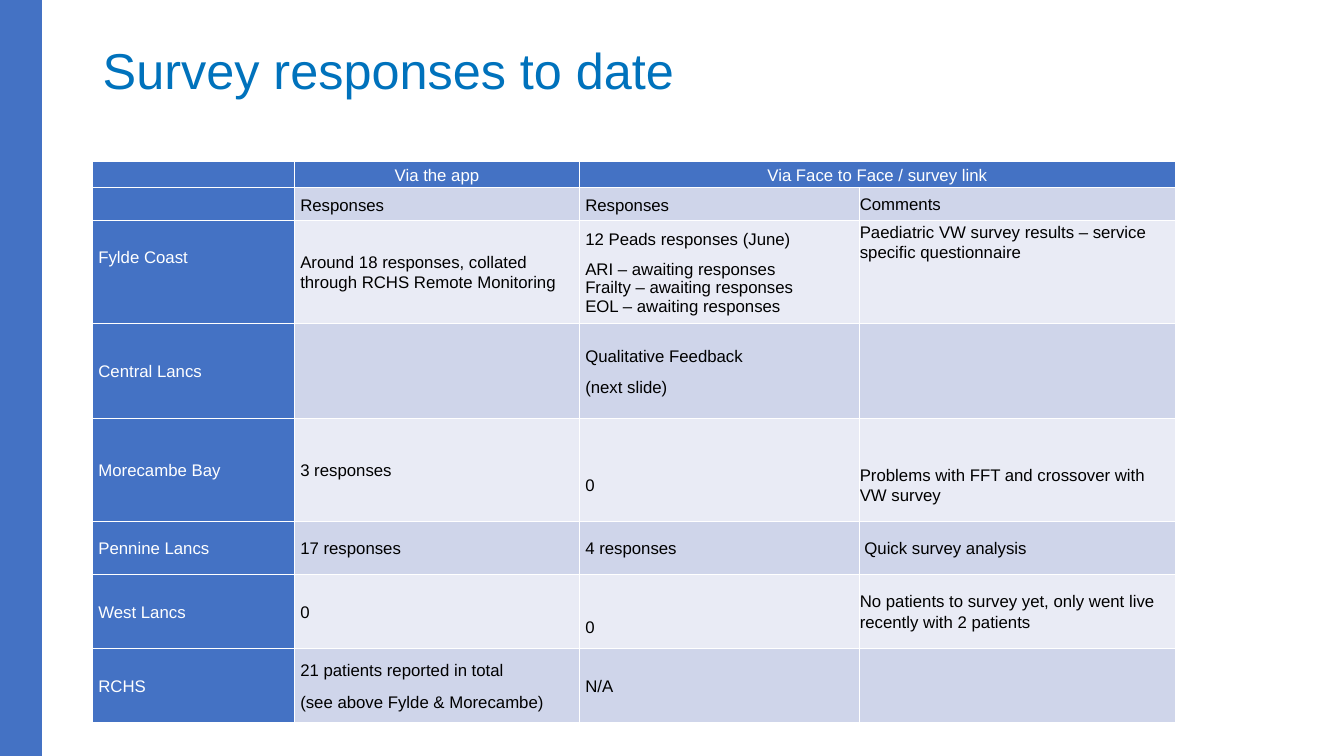
from lxml.etree import SubElement
from pptx import Presentation
from pptx.dml.color import RGBColor
from pptx.enum.shapes import MSO_SHAPE
from pptx.enum.text import MSO_ANCHOR, MSO_AUTO_SIZE, PP_ALIGN
from pptx.oxml.ns import qn
from pptx.util import Pt

BLUE, WHITE, BLACK = "4472C4", "FFFFFF", "000000"
BANDS = ["E9EBF5", "CFD5EA"]


def paint(target, color):
    target.solid()
    target.fore_color.rgb = RGBColor.from_string(color)


def write(para, text, size=12, color=BLACK, align=PP_ALIGN.LEFT, spacing=1.07, after=8):
    para.alignment = align
    para.line_spacing = spacing
    para.space_after = Pt(after)
    if not text:
        SubElement(para._p, qn("a:endParaRPr"), sz=str(size * 100))
        return
    span = para.add_run()
    span.text = text
    span.font.name = "Arial"
    span.font.size = Pt(size)
    span.font.color.rgb = RGBColor.from_string(color)


deck = Presentation()
deck.slide_width, deck.slide_height = Pt(960), Pt(540)
page = deck.slides.add_slide(deck.slide_layouts[5])

# Side bar
bar = page.shapes.add_shape(MSO_SHAPE.RECTANGLE, 0, 0, Pt(30), Pt(540))
bar.shadow.inherit = False
paint(bar.fill, BLUE)
bar.line.fill.background()

# Title
title = page.shapes.title
title.left, title.top, title.width, title.height = Pt(66.2), Pt(28.8), Pt(736.6), Pt(46.8)
title.text_frame.auto_size = MSO_AUTO_SIZE.NONE
title.text_frame.vertical_anchor = MSO_ANCHOR.MIDDLE
write(title.text_frame.paragraphs[0], "Survey responses to date",
      size=36, color="0072BC", spacing=0.9, after=0)

# Table content
rows = [
    ["", "Via the app", "Via Face to Face / survey link", ""],
    ["", "Responses", "Responses", "Comments"],
    ["Fylde Coast", "Around 18 responses, collated through RCHS Remote Monitoring",
     "12 Peads responses (June)\nARI – awaiting responses\n"
     "Frailty – awaiting responses\nEOL – awaiting responses",
     "Paediatric VW survey results – service specific questionnaire"],
    ["Central Lancs", "", "Qualitative Feedback\n(next slide)", ""],
    ["Morecambe Bay", "3 responses", "0", "Problems with FFT and crossover with VW survey"],
    ["Pennine Lancs", "17 responses", "4 responses", "Quick survey analysis"],
    ["West Lancs", "0", "0",
     "No patients to survey yet, only went live recently with 2 patients"],
    ["RCHS", "21 patients reported in total\n(see above Fylde & Morecambe)", "N/A", ""],
]
widths = [144.2, 203.6, 200.2, 225.4]
heights = [18.6, 23.4, 73.5, 67.8, 73.5, 38.2, 52.8, 52.8]

# Cells whose text sits off the middle: extra (left, top, bottom) margin
offsets = {(2, 0): (0, 0, 21.5), (2, 3): (0, 0, 43), (4, 2): (0, 21.5, 0),
           (4, 3): (0, 22, 0), (5, 3): (3.3, 0, 0), (6, 2): (0, 22, 0)}

# Table grid
table = page.shapes.add_table(len(rows), len(widths), Pt(66.2), Pt(115.5),
                              Pt(sum(widths)), Pt(sum(heights))).table
for column, width in zip(table.columns, widths):
    column.width = Pt(width)
for row, height in zip(table.rows, heights):
    row.height = Pt(height)
table.cell(0, 2).merge(table.cell(0, 3))

# Table cells
for r, texts in enumerate(rows):
    for c, text in enumerate(texts):
        cell = table.cell(r, c)
        left, top, bottom = offsets.get((r, c), (0, 0, 0))
        side, upper = (0, 0) if c == 3 else (4.1, 0.7)
        cell.margin_left, cell.margin_right = Pt(side + left), Pt(side)
        cell.margin_top, cell.margin_bottom = Pt(upper + top), Pt(bottom)
        cell.vertical_anchor = MSO_ANCHOR.MIDDLE

        heading = r == 0 or c == 0
        lines = text.split("\n")
        for index, line in enumerate(lines):
            frame = cell.text_frame
            para = frame.add_paragraph() if index else frame.paragraphs[0]
            tight = len(lines) > 2 and index > 0
            write(para, line, color=WHITE if heading else BLACK,
                  align=PP_ALIGN.CENTER if r == 0 else PP_ALIGN.LEFT,
                  spacing=1.0 if tight else 1.07, after=0 if tight else 8)

        # White borders come before the fill in the cell properties
        properties = cell._tc.get_or_add_tcPr()
        for edge in ["a:lnL", "a:lnR", "a:lnT", "a:lnB"]:
            border = SubElement(properties, qn(edge), w=str(Pt(1)))
            SubElement(SubElement(border, qn("a:solidFill")), qn("a:srgbClr"), val=WHITE)
        paint(cell.fill, BLUE if heading else BANDS[r % 2])

deck.save("out.pptx")
